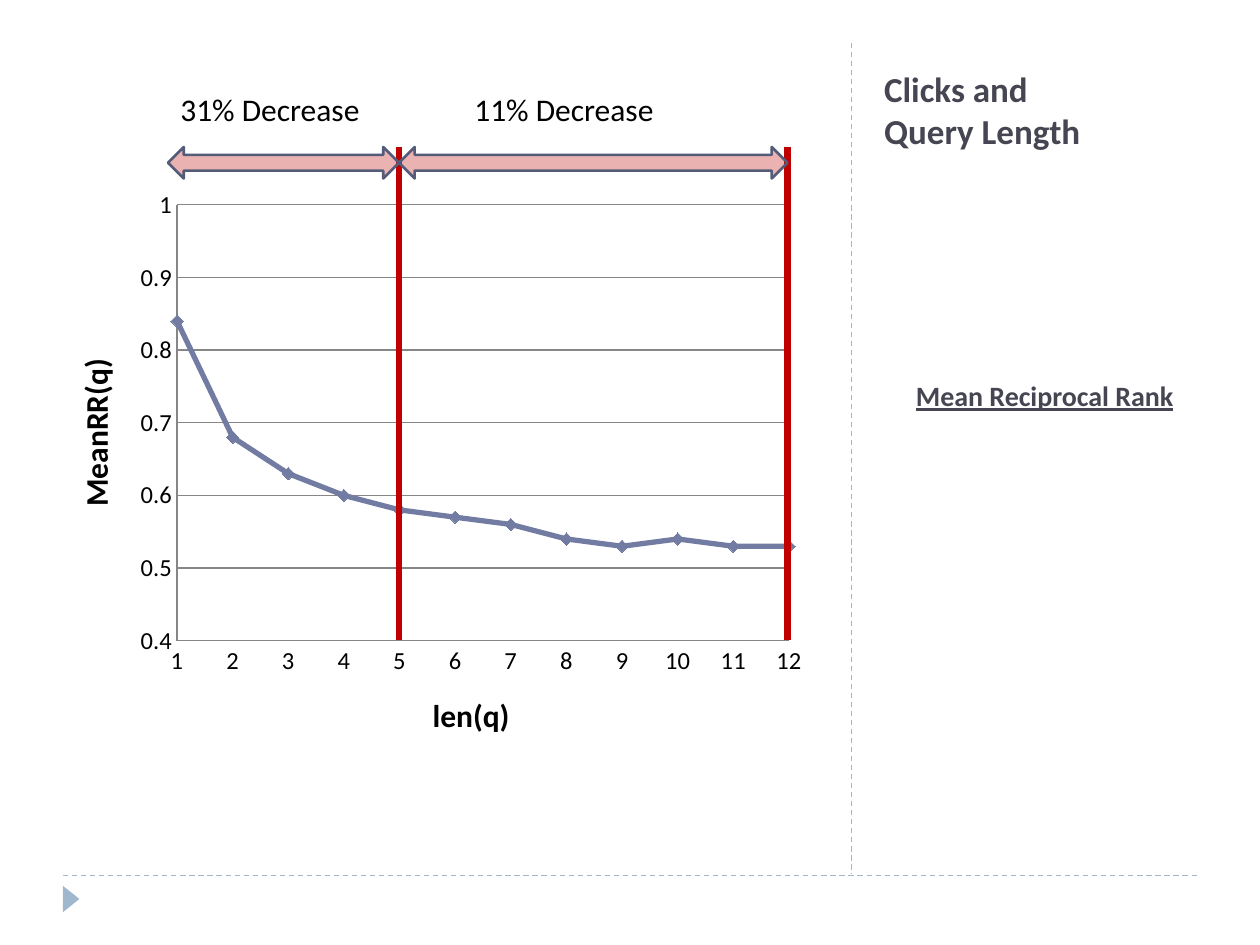
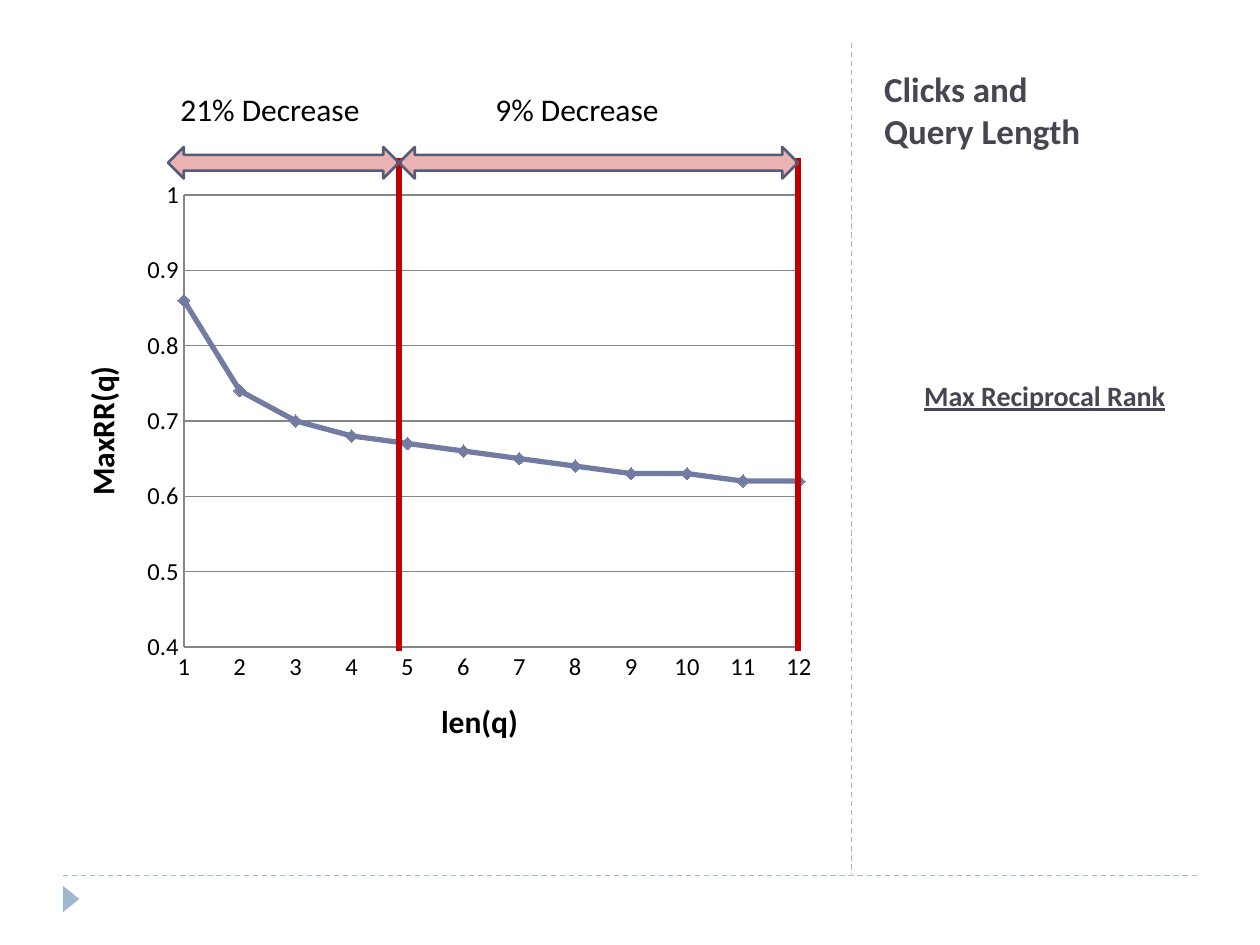
"""Builds two slides that chart reciprocal rank of clicks against query length."""
from lxml import etree
from pptx import Presentation
from pptx.chart.data import XyChartData
from pptx.dml.color import RGBColor
from pptx.enum.chart import XL_CHART_TYPE, XL_MARKER_STYLE, XL_TICK_MARK
from pptx.enum.dml import MSO_LINE
from pptx.enum.shapes import MSO_CONNECTOR, MSO_SHAPE
from pptx.enum.text import MSO_ANCHOR, MSO_AUTO_SIZE, PP_ALIGN
from pptx.oxml.ns import qn
from pptx.util import Pt

SCATTER = XL_CHART_TYPE.XY_SCATTER_SMOOTH
DIAMOND = XL_MARKER_STYLE.DIAMOND
NO_TICK = XL_TICK_MARK.NONE
DASH = MSO_LINE.DASH
STRAIGHT = MSO_CONNECTOR.STRAIGHT
TRIANGLE = MSO_SHAPE.ISOSCELES_TRIANGLE
DOUBLE_ARROW = MSO_SHAPE.LEFT_RIGHT_ARROW
BOTTOM, TOP = MSO_ANCHOR.BOTTOM, MSO_ANCHOR.TOP
LEFT, CENTER = PP_ALIGN.LEFT, PP_ALIGN.CENTER
NO_FIT = MSO_AUTO_SIZE.NONE

FONT = "Calibri"
INK, BLACK, RULE = "464653", "000000", "9FB8CD"
RED, OUTLINE, CURVE, GRID = "C00000", "545C79", "727CA3", "868686"

TITLE = ["Clicks and ", "Query Length"]
X_TITLE = "len(q)"
SLIDES = [
    {
        "measure": "Mean Reciprocal Rank",
        "y_title": "MeanRR(q)",
        "values": [0.84, 0.68, 0.63, 0.6, 0.58, 0.57, 0.56, 0.54, 0.53, 0.54, 0.53, 0.53],
        "chart": (30, 102, 437, 336),
        "plot": (101.2, 117.1, 349.7, 249.1),
        "bars": (84, 366),
        "stops": (96, 228, 450),
        "labels": [("31% Decrease", 96, 119.5), ("11% Decrease", 264, 119.5)],
    },
    {
        "measure": "Max Reciprocal Rank",
        "y_title": "MaxRR(q)",
        "values": [0.86, 0.74, 0.7, 0.68, 0.67, 0.66, 0.65, 0.64, 0.63, 0.63, 0.62, 0.62],
        "chart": (30, 96, 443.5, 345),
        "plot": (105.1, 111.4, 351.5, 258.3),
        "bars": (90, 372),
        "stops": (96, 228, 456),
        "labels": [("21% Decrease", 96, 119.5), ("9% Decrease", 276, 110)],
    },
]


def rgb(value):
    """Turn a hex string into a colour."""
    return RGBColor.from_string(value)


def place(sp, x, y, w, h):
    """Move and size a shape, in points."""
    sp.left, sp.top, sp.width, sp.height = Pt(x), Pt(y), Pt(w), Pt(h)


def style(font, size, color, bold=False, underline=False):
    """Format a font."""
    font.name, font.size, font.bold, font.underline = FONT, Pt(size), bold, underline
    font.color.rgb = rgb(color)


def add_run(p, text, *args, **kwargs):
    """Append a formatted run to a paragraph."""
    r = p.add_run()
    r.text = text
    style(r.font, *args, **kwargs)


def add_line(slide, x1, y1, x2, y2, color, width, dash=None):
    """Draw a straight line without shadow."""
    cn = slide.shapes.add_connector(STRAIGHT, Pt(x1), Pt(y1), Pt(x2), Pt(y2))
    cn.line.color.rgb, cn.line.width = rgb(color), Pt(width)
    if dash:
        cn.line.dash_style = dash
    etree.SubElement(cn._element.spPr, qn("a:effectLst"))


def add_shape(slide, kind, x, y, w, h, fill):
    """Draw a filled shape without shadow or line."""
    sp = slide.shapes.add_shape(kind, Pt(x), Pt(y), Pt(w), Pt(h))
    sp.shadow.inherit = False
    sp.fill.solid()
    sp.fill.fore_color.rgb = rgb(fill)
    sp.line.fill.background()
    return sp


def add_frame(slide, measure):
    """Add the rules, corner marker, title and measure that slides share."""
    add_line(slide, 36, 500.4, 684, 500.4, RULE, 0.75, DASH)
    add_line(slide, 486.7, 24.5, 486.7, 499.7, RULE, 0.75, DASH)
    add_shape(slide, TRIANGLE, 33.1, 509, 15.1, 9.4, RULE).rotation = 90

    title, body = slide.placeholders
    for sp, top, height, anchor in ((title, 24, 66, BOTTOM), (body, 210, 267, TOP)):
        place(sp, 498, top, 198, height)
        sp.text_frame.auto_size = NO_FIT
        sp.text_frame.vertical_anchor = anchor

    p = title.text_frame.paragraphs[0]
    p.alignment = LEFT
    for i, text in enumerate(TITLE):
        if i:
            p.add_line_break()
        add_run(p, text, 20, INK, bold=True)

    p = body.text_frame.paragraphs[0]
    pPr = p._p.get_or_add_pPr()
    pPr.set("marL", "0")
    pPr.set("indent", "0")
    etree.SubElement(pPr, qn("a:buNone"))
    p.alignment, p.line_spacing = CENTER, Pt(22)
    p.space_before, p.space_after = Pt(0), Pt(10)
    add_run(p, measure, 16, INK, bold=True, underline=True)


def set_plot_area(chart, frame, plot):
    """Fix the inner plot area inside the chart frame."""
    area = chart._chartSpace.chart.plotArea
    for old in area.findall(qn("c:layout")):
        area.remove(old)
    layout = etree.Element(qn("c:layout"))
    manual = etree.SubElement(layout, qn("c:manualLayout"))
    x, y, w, h = frame
    px, py, pw, ph = plot
    parts = [("layoutTarget", "inner"), ("xMode", "edge"), ("yMode", "edge"),
             ("x", (px - x) / w), ("y", (py - y) / h), ("w", pw / w), ("h", ph / h)]
    for tag, val in parts:
        etree.SubElement(manual, qn("c:" + tag)).set("val", str(val))
    area.insert(0, layout)


def add_rank_chart(slide, y_title, values, frame, plot):
    """Add the smooth scatter chart of rank by query length."""
    data = XyChartData()
    points = data.add_series("Series 1")
    for length, rank in enumerate(values, 1):
        points.add_data_point(length, rank)
    chart = slide.shapes.add_chart(SCATTER, *map(Pt, frame), data).chart
    chart.has_legend = chart.has_title = False
    style(chart.font, 14, BLACK)
    chart.plots[0].vary_by_categories = False

    series = chart.plots[0].series[0]
    series.smooth = True
    series.format.line.color.rgb, series.format.line.width = rgb(CURVE), Pt(3)
    series.marker.style, series.marker.size = DIAMOND, 7
    series.marker.format.fill.solid()
    series.marker.format.fill.fore_color.rgb = rgb(CURVE)
    series.marker.format.line.color.rgb = rgb(CURVE)

    axes = ((chart.category_axis, X_TITLE, 1, 12, 1), (chart.value_axis, y_title, 0.4, 1, 0.1))
    for axis, text, low, high, step in axes:
        axis.minimum_scale, axis.maximum_scale, axis.major_unit = low, high, step
        axis.major_tick_mark = axis.minor_tick_mark = NO_TICK
        axis.has_major_gridlines = axis is chart.value_axis or text == y_title
        axis.format.line.color.rgb = rgb(GRID)
        tf = axis.axis_title.text_frame
        add_run(tf.paragraphs[0], text, 18, BLACK, bold=True)
        if text == y_title:
            axis.major_gridlines.format.line.color.rgb = rgb(GRID)
            tf._txBody.bodyPr.set("rot", "-5400000")
            tf._txBody.bodyPr.set("vert", "horz")
    set_plot_area(chart, frame, plot)


def add_ranges(slide, stops, bars, labels):
    """Mark the ranges of query length with bars, arrows and labels."""
    for x in stops[1:]:
        add_line(slide, x, bars[0], x, bars[1], RED, 3.5)
    for start, end in zip(stops, stops[1:]):
        sp = add_shape(slide, DOUBLE_ARROW, start, 84, end - start, 18, RED)
        sp.line.color.rgb, sp.line.width = rgb(OUTLINE), Pt(1.5)
        color = sp._element.spPr.find(qn("a:solidFill"))[0]
        etree.SubElement(color, qn("a:alpha")).set("val", "30000")
    for text, x, width in labels:
        tf = slide.shapes.add_textbox(Pt(x), Pt(48), Pt(width), Pt(29)).text_frame
        tf.word_wrap = False
        add_run(tf.paragraphs[0], text, 18, BLACK)


def main():
    """Build and save the presentation."""
    prs = Presentation()
    prs.slide_width, prs.slide_height = Pt(720), Pt(540)
    for item in SLIDES:
        slide = prs.slides.add_slide(prs.slide_layouts[1])
        add_frame(slide, item["measure"])
        add_rank_chart(slide, item["y_title"], item["values"], item["chart"], item["plot"])
        add_ranges(slide, item["stops"], item["bars"], item["labels"])
    prs.save("out.pptx")


if __name__ == "__main__":
    main()
